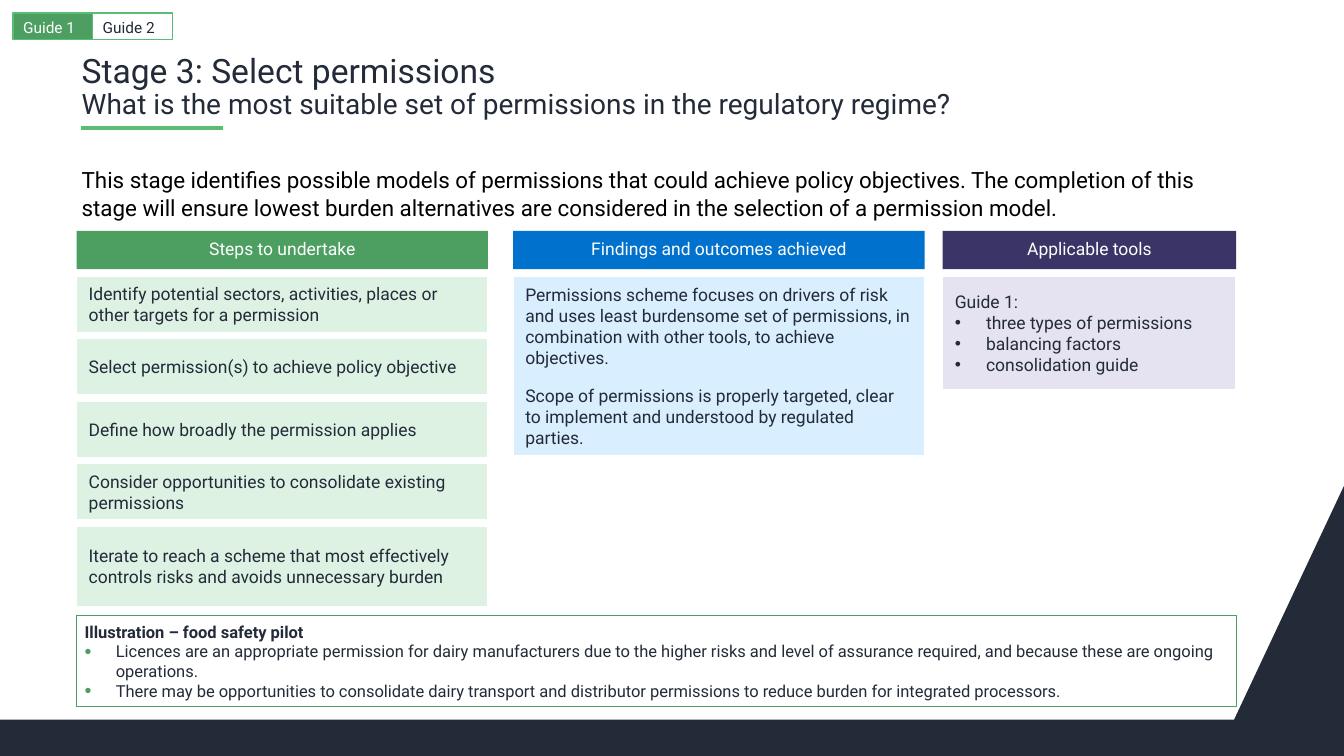
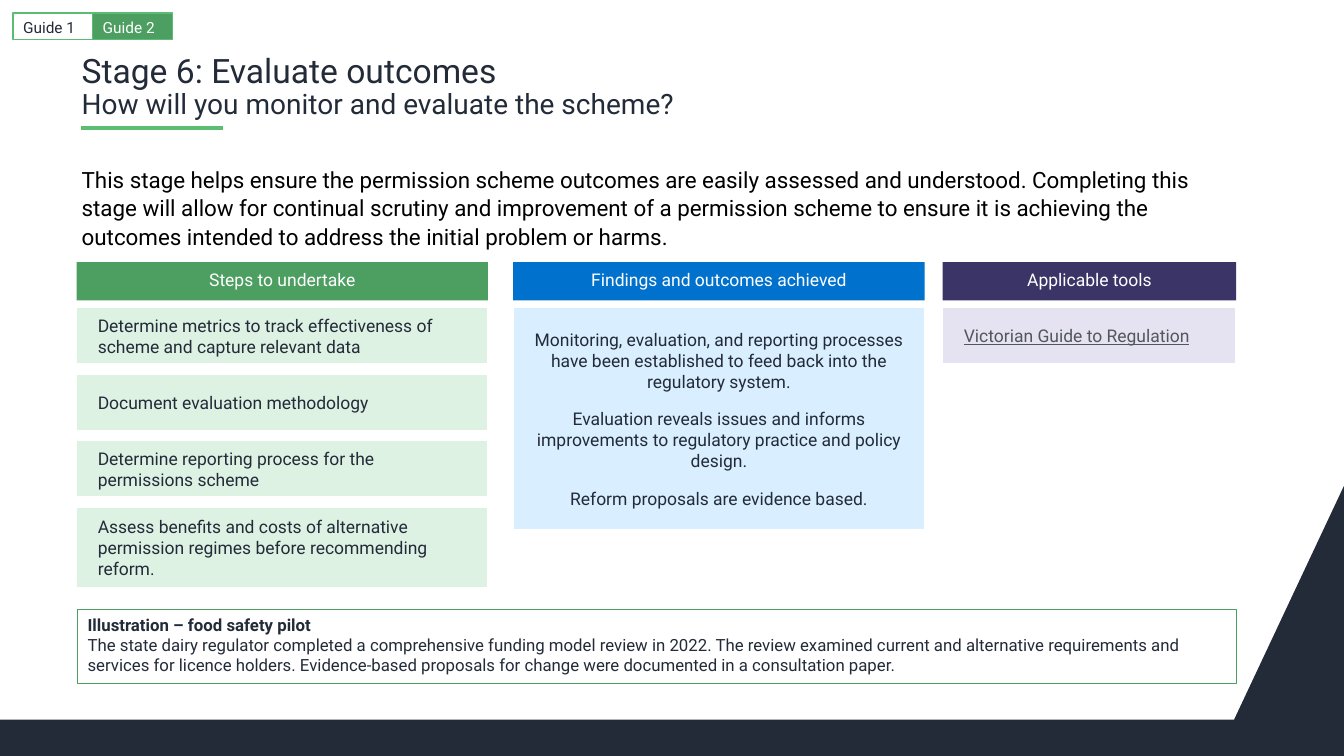
from lxml.etree import SubElement
from pptx import Presentation
from pptx.dml.color import RGBColor
from pptx.enum.shapes import MSO_CONNECTOR, MSO_SHAPE
from pptx.enum.text import MSO_ANCHOR as Anchor, MSO_AUTO_SIZE, PP_ALIGN as Align
from pptx.oxml.ns import qn
from pptx.util import Inches, Pt

# Shared colours and type
FONT = "Roboto"
NAVY = RGBColor(0x23, 0x2B, 0x39)
BLACK = RGBColor(0x00, 0x00, 0x00)
WHITE = RGBColor(0xFF, 0xFF, 0xFF)
GREEN = RGBColor(0x4C, 0x9E, 0x61)
BRIGHT_GREEN = RGBColor(0x5B, 0xBD, 0x74)
BLUE = RGBColor(0x00, 0x72, 0xCE)
PURPLE = RGBColor(0x3A, 0x34, 0x67)
PALE_GREEN = RGBColor(0xDE, 0xF2, 0xE3)
PALE_BLUE = RGBColor(0xD9, 0xEE, 0xFF)
PALE_PURPLE = RGBColor(0xE5, 0xE3, 0xF1)
LINK_GREY = RGBColor(0x53, 0x56, 0x5A)

TITLE_BOX = (0.77, 0.49, 11.5, 0.51)
BODY_BOX = (0.77, 1.58, 11.5, 5.17)
HEADER_HEIGHT, HEADER_GAP = 0.38, 0.07
HANGING = 0.31

# Columns: left, width, heading, heading colour, card colour
COLUMNS = [
    (0.76, 4.08, "Steps to undertake", GREEN, PALE_GREEN),
    (5.09, 4.08, "Findings and outcomes achieved", BLUE, PALE_BLUE),
    (9.35, 2.91, "Applicable tools", PURPLE, PALE_PURPLE),
]
CARD_FONT = {"size": Pt(12.5), "color": NAVY}
SPACED = {"space_before": Pt(6), "space_after": Pt(6)}
SMALL_INSETS = (0.12, 0.08)
WIDE_INSETS = (0.21, 0.01)


def set_font(font, values):
    for name, value in {"name": FONT, **values}.items():
        if name == "color":
            font.color.rgb = value
        else:
            setattr(font, name, value)


def set_frame(frame, insets, anchor):
    across, down = insets
    values = {
        "word_wrap": True, "auto_size": MSO_AUTO_SIZE.NONE, "vertical_anchor": anchor,
        "margin_left": Inches(across), "margin_right": Inches(across),
        "margin_top": Inches(down), "margin_bottom": Inches(down),
    }
    for name, value in values.items():
        setattr(frame, name, value)


def set_bullet(paragraph, color=None):
    """Give a paragraph a hanging bullet, enlarged when it is coloured."""
    properties = paragraph._p.get_or_add_pPr()
    properties.set("marL", str(Inches(HANGING)))
    properties.set("indent", str(-Inches(HANGING)))
    if color is not None:
        bullet_color = SubElement(properties, qn("a:buClr"))
        SubElement(bullet_color, qn("a:srgbClr"), val=str(color))
        SubElement(properties, qn("a:buSzPct"), val="120000")
    SubElement(properties, qn("a:buFont"), typeface="Arial")
    SubElement(properties, qn("a:buChar"), char="•")


def remove_bullet(paragraph):
    properties = paragraph._p.get_or_add_pPr()
    properties.set("marL", "0")
    properties.set("indent", "0")
    SubElement(properties, qn("a:buNone"))


def write_paragraphs(frame, texts, font, layout=None):
    """Write one paragraph per text and return them."""
    paragraphs = []
    for index, text in enumerate(texts):
        paragraph = frame.add_paragraph() if index else frame.paragraphs[0]
        for name, value in {"alignment": Align.LEFT, **(layout or {})}.items():
            setattr(paragraph, name, value)
        run = paragraph.add_run()
        run.text = text
        set_font(run.font, font)
        paragraphs.append(paragraph)
    return paragraphs


def add_box(slide, box, fill=None, line=None, line_width=1.0):
    shape = slide.shapes.add_shape(MSO_SHAPE.RECTANGLE, *map(Inches, box))
    shape.shadow.inherit = False
    if fill is None:
        shape.fill.background()
    else:
        shape.fill.solid()
        shape.fill.fore_color.rgb = fill
    if line is None:
        shape.line.fill.background()
    else:
        shape.line.color.rgb = line
        shape.line.width = Pt(line_width)
    return shape


def add_card(slide, box, fill, texts, insets, font=None, layout=None):
    shape = add_box(slide, box, fill, WHITE)
    set_frame(shape.text_frame, insets, Anchor.MIDDLE)
    return write_paragraphs(shape.text_frame, texts, {**CARD_FONT, **(font or {})}, layout)


def decorate_layout(slide):
    """Draw the dark corner band and title rule, then keep them on the layout."""
    outline = [(0, 7.14), (0, 7.5), (13.33, 7.5), (13.33, 4.82)]
    builder = slide.shapes.build_freeform(Inches(12.24), Inches(7.14))
    builder.add_line_segments([(Inches(x), Inches(y)) for x, y in outline], close=True)
    band = builder.convert_to_shape()
    band.shadow.inherit = False
    band.fill.solid()
    band.fill.fore_color.rgb = NAVY
    band.line.fill.background()

    rule = slide.shapes.add_connector(
        MSO_CONNECTOR.STRAIGHT, Inches(0.8), Inches(1.27), Inches(2.21), Inches(1.27))
    rule.line.color.rgb = BRIGHT_GREEN
    rule.line.width = Pt(3)
    SubElement(rule._element.spPr, qn("a:effectLst"))

    for part in (band, rule):
        slide.slide_layout.shapes.element.append(part.element)


def place(shape, box):
    shape.left, shape.top, shape.width, shape.height = map(Inches, box)


def fill_title(slide, heading, question):
    title = slide.shapes.title
    place(title, TITLE_BOX)
    set_frame(title.text_frame, (0.04, 0.05), Anchor.TOP)
    paragraph, = write_paragraphs(title.text_frame, [heading], {"size": Pt(24), "color": NAVY},
                                  {"line_spacing": 0.9})
    paragraph.add_line_break()
    SubElement(paragraph._p.find(qn("a:br")), qn("a:rPr"), sz="2400")
    run = paragraph.add_run()
    run.text = question
    set_font(run.font, {"size": Pt(20), "color": NAVY})


def fill_introduction(slide, text):
    body = slide.placeholders[1]
    place(body, BODY_BOX)
    set_frame(body.text_frame, (0.04, 0.05), Anchor.TOP)
    layout = {"line_spacing": 1.06, "space_before": Pt(6), "space_after": Pt(8)}
    paragraph, = write_paragraphs(body.text_frame, [text], {"size": Pt(16), "color": BLACK}, layout)
    remove_bullet(paragraph)


def add_guide_tabs(slide, box, active):
    left, top, width, height = box
    for index, label in enumerate(["Guide 1", "Guide 2"]):
        selected = label == active
        tab = add_box(slide, (left + index * width, top, width, height),
                      GREEN if selected else WHITE, BRIGHT_GREEN)
        set_frame(tab.text_frame, (0.1, 0.05), Anchor.TOP)
        write_paragraphs(tab.text_frame, [label],
                         {"size": Pt(11), "color": WHITE if selected else NAVY},
                         {"space_before": Pt(2), "space_after": Pt(2)})


def add_column_headers(slide, top):
    """Draw the three headings and return the top of the cards below."""
    for left, width, heading, color, _ in COLUMNS:
        header = add_box(slide, (left, top, width, HEADER_HEIGHT), color)
        set_frame(header.text_frame, SMALL_INSETS, Anchor.MIDDLE)
        write_paragraphs(header.text_frame, [heading], {**CARD_FONT, "color": WHITE},
                         {"alignment": Align.CENTER, "line_spacing": 0.9})
    return top + HEADER_HEIGHT + HEADER_GAP


def add_steps(slide, top, steps, gap, insets):
    left, width, _, _, fill = COLUMNS[0]
    for index, step in enumerate(steps):
        height = 0.8 if index == len(steps) - 1 else 0.56
        add_card(slide, (left, top, width, height), fill, [step], insets)
        top += height + gap


def add_column_card(slide, column, top, height, texts, insets, font=None, layout=None):
    left, width, _, _, fill = COLUMNS[column]
    return add_card(slide, (left, top, width, height), fill, texts, insets, font, layout)


def add_illustration(slide, box, texts, size, insets, anchor, bulleted=False):
    frame = add_box(slide, box, line=GREEN, line_width=0.75).text_frame
    set_frame(frame, insets, anchor)
    heading, *details = write_paragraphs(frame, ["Illustration – food safety pilot", *texts],
                                         {"size": Pt(size), "color": NAVY})
    heading.runs[0].font.bold = True
    if bulleted:
        for paragraph in details:
            set_bullet(paragraph, GREEN)


def start_stage(presentation, heading, question, introduction, guide):
    slide = presentation.slides.add_slide(presentation.slide_layouts[1])
    fill_title(slide, heading, question)
    fill_introduction(slide, introduction)
    add_guide_tabs(slide, (0.13, 0.13, 0.79, 0.26), guide)
    return slide


def build_select_permissions(presentation):
    slide = start_stage(
        presentation, "Stage 3: Select permissions",
        "What is the most suitable set of permissions in the regulatory regime?",
        "This stage identifies possible models of permissions that could achieve policy "
        "objectives. The completion of this stage will ensure lowest burden alternatives are "
        "considered in the selection of a permission model.", "Guide 1")
    top = add_column_headers(slide, 2.29)
    add_steps(slide, top, [
        "Identify potential sectors, activities, places or other targets for a permission",
        "Select permission(s) to achieve policy objective",
        "Define how broadly the permission applies",
        "Consider opportunities to consolidate existing permissions",
        "Iterate to reach a scheme that most effectively controls risks and avoids "
        "unnecessary burden",
    ], 0.06, SMALL_INSETS)
    add_column_card(slide, 1, top, 1.78, [
        "Permissions scheme focuses on drivers of risk and uses least burdensome set of "
        "permissions, in combination with other tools, to achieve objectives.",
        "Scope of permissions is properly targeted, clear to implement and understood by "
        "regulated parties.",
    ], SMALL_INSETS, layout=SPACED)
    tools = add_column_card(slide, 2, top, 1.13, [
        "Guide 1:", "three types of permissions", "balancing factors", "consolidation guide",
    ], SMALL_INSETS)
    for paragraph in tools[1:]:
        set_bullet(paragraph)
    add_illustration(slide, (0.76, 6.11, 11.5, 0.9), [
        "Licences are an appropriate permission for dairy manufacturers due to the higher risks "
        "and level of assurance required, and because these are ongoing operations.",
        "There may be opportunities to consolidate dairy transport and distributor permissions "
        "to reduce burden for integrated processors.",
    ], 11.8, (0.08, 0.04), Anchor.MIDDLE, bulleted=True)
    return slide


def build_evaluate_outcomes(presentation):
    slide = start_stage(
        presentation, "Stage 6: Evaluate outcomes",
        "How will you monitor and evaluate the scheme?",
        "This stage helps ensure the permission scheme outcomes are easily assessed and "
        "understood. Completing this stage will allow for continual scrutiny and improvement of "
        "a permission scheme to ensure it is achieving the outcomes intended to address the "
        "initial problem or harms.", "Guide 2")
    top = add_column_headers(slide, 2.6)
    add_steps(slide, top, [
        "Determine metrics to track effectiveness of scheme and capture relevant data",
        "Document evaluation methodology",
        "Determine reporting process for the permissions scheme",
        "Assess benefits and costs of alternative permission regimes before recommending reform.",
    ], 0.1, WIDE_INSETS)
    add_column_card(slide, 1, top, 2.21, [
        "Monitoring, evaluation, and reporting processes have been established to feed back "
        "into the regulatory system.",
        "Evaluation reveals issues and informs improvements to regulatory practice and policy "
        "design.",
        "Reform proposals are evidence based.",
    ], WIDE_INSETS, layout={**SPACED, "alignment": Align.CENTER})
    add_column_card(slide, 2, top, 0.56, ["Victorian Guide to Regulation"], WIDE_INSETS,
                    font={"color": LINK_GREY, "underline": True})
    add_illustration(slide, (0.77, 6.05, 11.49, 0.73), [
        "The state dairy regulator completed a comprehensive funding model review in 2022. The "
        "review examined current and alternative requirements and services for licence holders. "
        "Evidence-based proposals for change were documented in a consultation paper.",
    ], 12, (0.1, 0.05), Anchor.TOP)


def main():
    presentation = Presentation()
    presentation.slide_width, presentation.slide_height = Inches(13.33), Inches(7.5)
    decorate_layout(build_select_permissions(presentation))
    build_evaluate_outcomes(presentation)
    presentation.save("out.pptx")


if __name__ == "__main__":
    main()
